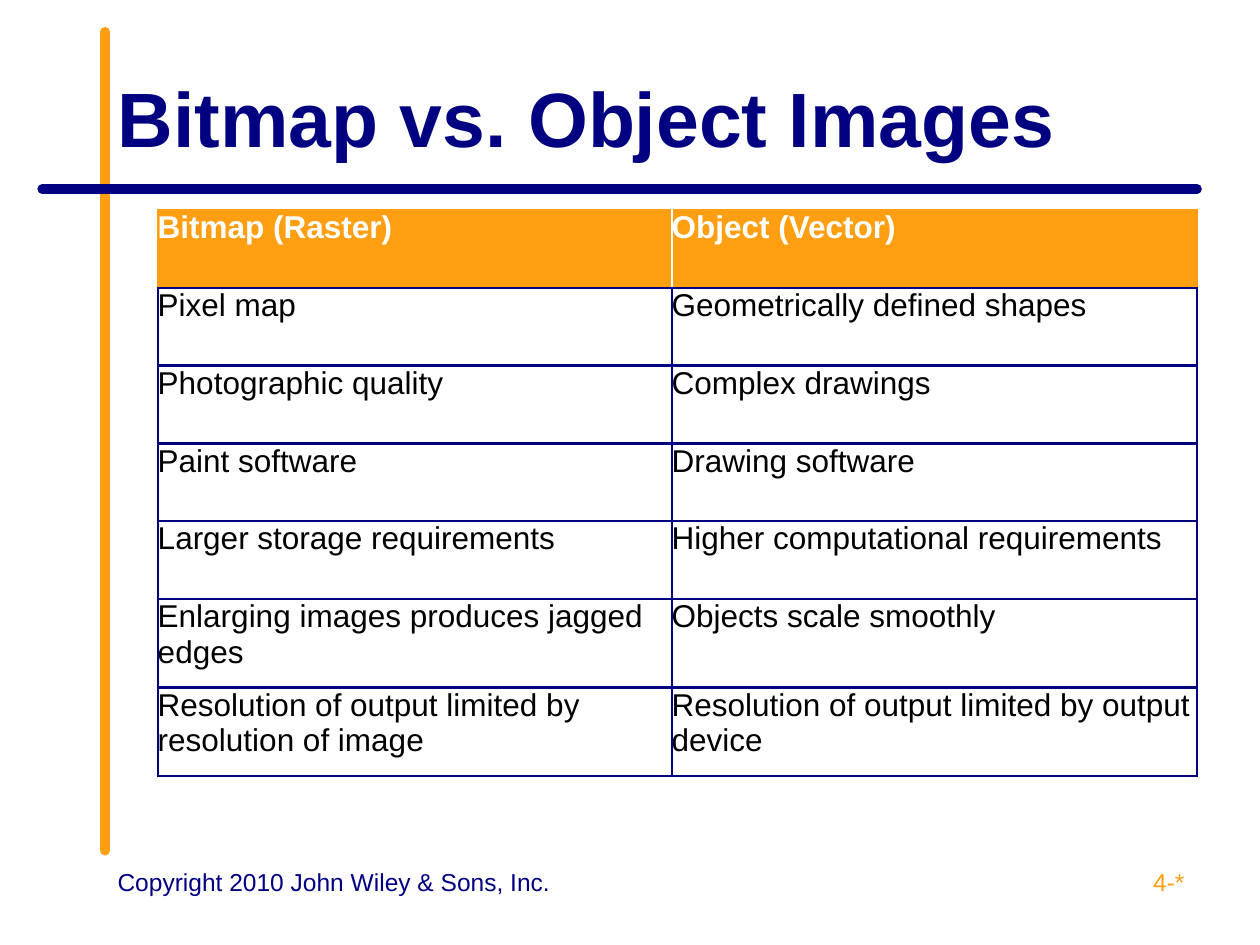
from dataclasses import dataclass

from lxml.etree import SubElement as Sub
from pptx import Presentation
from pptx.dml.color import RGBColor as Rgb
from pptx.enum.shapes import MSO_CONNECTOR as Conn
from pptx.enum.text import MSO_ANCHOR as Anchor, PP_ALIGN as Align
from pptx.oxml.ns import qn
from pptx.util import Cm, Pt

HUES = {"navy": "000080", "gold": "FF9F11", "white": "FFFFFF", "black": "000000"}
FONT = "Arial"
ROWS = [
    ("Bitmap (Raster)", "Object (Vector)"),
    ("Pixel map", "Geometrically defined shapes"),
    ("Photographic quality", "Complex drawings"),
    ("Paint software", "Drawing software"),
    ("Larger storage requirements", "Higher computational requirements"),
    ("Enlarging images produces jagged edges", "Objects scale smoothly"),
    ("Resolution of output limited by resolution of image",
     "Resolution of output limited by output device"),
]
WIDTHS = [10.36, 10.59]
HEIGHTS = [1.57] * 5 + [1.78] * 2


@dataclass
class Rule:
    x1: float
    y1: float
    x2: float
    y2: float
    hue: str


@dataclass
class Note:
    text: str
    left: float
    width: float
    hue: str
    align: Align


RULES = [
    Rule(2.12, 17.15, 2.12, 0.64, "gold"),
    Rule(24.13, 3.81, 0.85, 3.81, "navy"),
]
NOTES = [
    Note("4-*", 18.2, 5.93, "gold", Align.RIGHT),
    Note("Copyright 2010 John Wiley & Sons, Inc.", 2.12, 9.31, "navy", Align.LEFT),
]


def color(hue: str) -> Rgb:
    return Rgb.from_string(HUES[hue])


def write(frame, text: str, size: int = 18, hue: str = "black",
          bold: bool = False, align: Align = Align.LEFT) -> None:
    frame.word_wrap = True
    para = frame.paragraphs[0]
    para.alignment = align
    run = para.add_run()
    run.text = text
    font = run.font
    font.name, font.size, font.bold = FONT, Pt(size), bold
    font.color.rgb = color(hue)


def draw_rule(shapes, rule: Rule) -> None:
    line = shapes.add_connector(
        Conn.STRAIGHT, Cm(rule.x1), Cm(rule.y1), Cm(rule.x2), Cm(rule.y2))
    line.line.color.rgb = color(rule.hue)
    line.line.width = Pt(5.5)
    line.line._ln.set("cap", "rnd")
    Sub(line._element.spPr, qn("a:effectLst"))


def draw_note(shapes, note: Note) -> None:
    box = shapes.add_textbox(Cm(note.left), Cm(17.35), Cm(note.width), Cm(1.32))
    write(box.text_frame, note.text, size=14, hue=note.hue, align=note.align)


def set_edges(cell, edges: dict[str, str]) -> None:
    props = cell._tc.get_or_add_tcPr()
    for side in "LRTB":
        edge = Sub(props, qn(f"a:ln{side}"), w=str(Pt(1.5)))
        fill = Sub(edge, qn("a:solidFill"))
        Sub(fill, qn("a:srgbClr"), val=HUES[edges[side]])


def draw_cell(cell, text: str, row: int, col: int) -> None:
    head = row == 0
    edges = dict.fromkeys("LRTB", "navy")
    if head:
        edges.update(L="gold", R="gold", T="gold")
        edges["L" if col else "R"] = "white"
    set_edges(cell, edges)
    cell.margin_left = cell.margin_right = cell.margin_top = cell.margin_bottom = 0
    cell.vertical_anchor = Anchor.TOP
    if head:
        cell.fill.solid()
        cell.fill.fore_color.rgb = color("gold")
    else:
        cell.fill.background()
    write(cell.text_frame, text, hue="white" if head else "black", bold=head)


def draw_table(shapes) -> None:
    table = shapes.add_table(
        len(ROWS), len(WIDTHS), Cm(3.18), Cm(4.23),
        Cm(sum(WIDTHS)), Cm(sum(HEIGHTS))).table
    table.horz_banding = False
    for col, width in zip(table.columns, WIDTHS):
        col.width = Cm(width)
    for row, height in zip(table.rows, HEIGHTS):
        row.height = Cm(height)
    for i, texts in enumerate(ROWS):
        for j, text in enumerate(texts):
            draw_cell(table.cell(i, j), text, i, j)


def main() -> None:
    deck = Presentation()
    deck.slide_width, deck.slide_height = Cm(25.4), Cm(19.05)
    slide = deck.slides.add_slide(deck.slide_layouts[5])
    shapes = slide.shapes
    for rule in RULES:
        draw_rule(shapes, rule)
    title = shapes.title
    title.left, title.top = Cm(2.12), Cm(0.76)
    title.width, title.height = Cm(22.02), Cm(3.18)
    title.text_frame.vertical_anchor = Anchor.MIDDLE
    write(title.text_frame, "Bitmap vs. Object Images", size=44, hue="navy", bold=True)
    draw_table(shapes)
    for note in NOTES:
        draw_note(shapes, note)
    deck.save("out.pptx")


if __name__ == "__main__":
    main()
